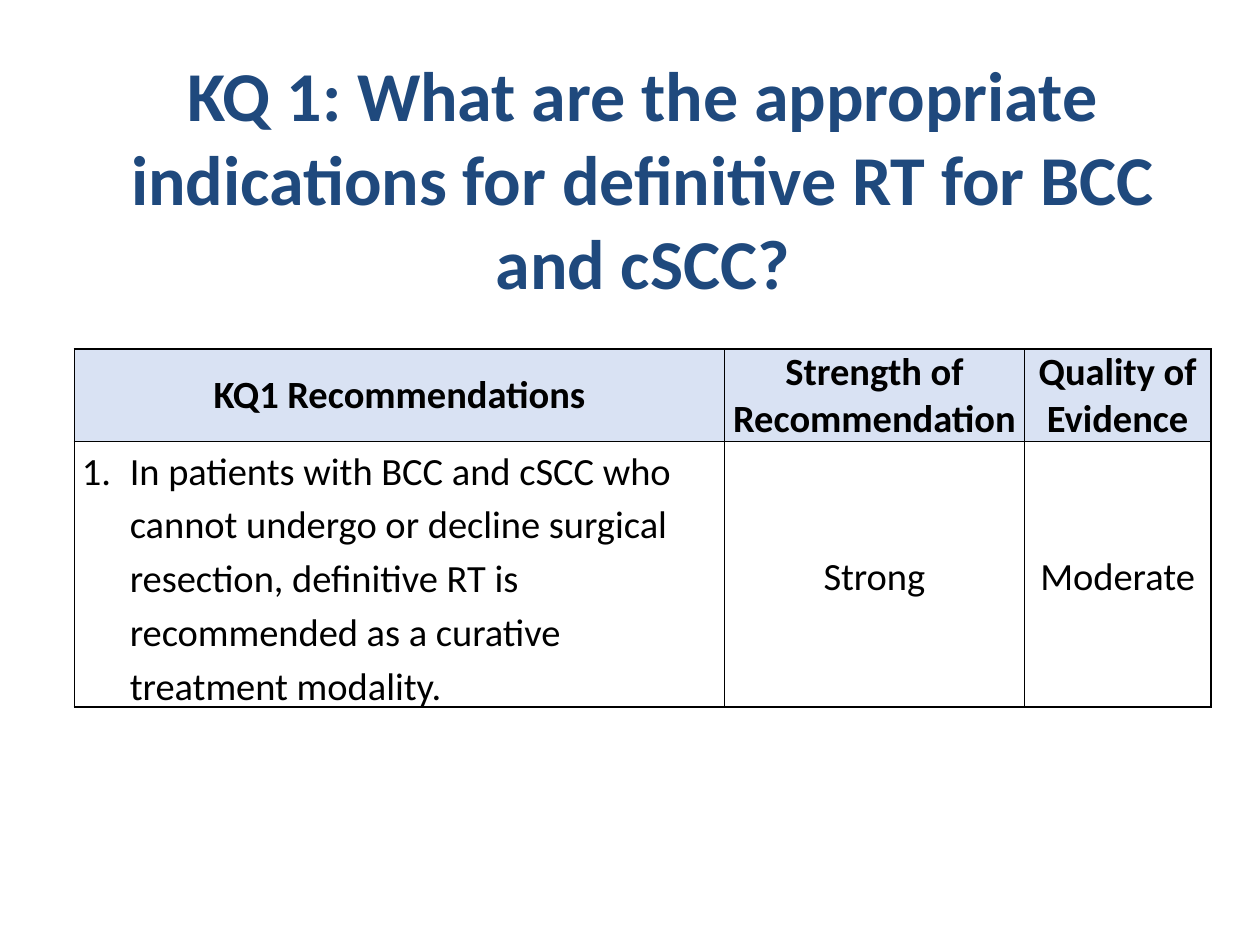
"""Build the KQ 1 recommendation slide with its evidence table."""
from dataclasses import dataclass

from lxml import etree
from pptx import Presentation
from pptx.dml.color import RGBColor
from pptx.enum.text import MSO_ANCHOR, PP_ALIGN
from pptx.oxml.ns import qn
from pptx.util import Inches, Pt

LEFT, CENTER = PP_ALIGN.LEFT, PP_ALIGN.CENTER
TOP, MIDDLE = MSO_ANCHOR.TOP, MSO_ANCHOR.MIDDLE


@dataclass(frozen=True)
class Theme:
    font: str = "Calibri"
    title: RGBColor = RGBColor(0x1F, 0x49, 0x7D)
    ink: RGBColor = RGBColor(0, 0, 0)
    header: RGBColor = RGBColor(0xD9, 0xE2, 0xF3)
    border: str = "000000"
    title_size: Pt = Pt(40)
    table_size: Pt = Pt(22)
    border_width: Pt = Pt(1)


@dataclass(frozen=True)
class CellText:
    text: str
    header: bool = False
    numbered: bool = False


THEME = Theme()
COLUMNS = (5.16, 2.38, 1.48)
ROWS = (0.6, 1.36)
TABLE = (
    (
        CellText("KQ1 Recommendations", header=True),
        CellText("Strength of Recommendation", header=True),
        CellText("Quality of Evidence", header=True),
    ),
    (
        CellText(
            "In patients with BCC and cSCC who cannot undergo or decline surgical "
            "resection, definitive RT is recommended as a curative treatment modality.",
            numbered=True,
        ),
        CellText("Strong"),
        CellText("Moderate"),
    ),
)


def add_run(p, text: str, size: Pt, color: RGBColor, bold: bool) -> None:
    r = p.add_run()
    r.text = text
    r.font.name = THEME.font
    r.font.size = size
    r.font.bold = bold
    r.font.color.rgb = color


def number_paragraph(p) -> None:
    pPr = p._p.get_or_add_pPr()
    pPr.set("marL", str(Inches(0.38)))
    pPr.set("indent", str(Inches(-0.38)))
    etree.SubElement(pPr, qn("a:buFont"), typeface="+mj-lt")
    etree.SubElement(pPr, qn("a:buAutoNum"), type="arabicPeriod")


def add_borders(cell) -> None:
    tcPr = cell._tc.get_or_add_tcPr()
    for i, side in enumerate(("lnL", "lnR", "lnT", "lnB")):
        ln = etree.Element(qn(f"a:{side}"), w=str(THEME.border_width))
        fill = etree.SubElement(ln, qn("a:solidFill"))
        etree.SubElement(fill, qn("a:srgbClr"), val=THEME.border)
        tcPr.insert(i, ln)


def fill_cell(cell, item: CellText) -> None:
    cell.margin_left = cell.margin_right = Inches(0.06)
    cell.margin_top = cell.margin_bottom = Inches(0)
    cell.vertical_anchor = TOP if item.numbered else MIDDLE
    if item.header:
        cell.fill.solid()
        cell.fill.fore_color.rgb = THEME.header
    else:
        cell.fill.background()
    add_borders(cell)
    p = cell.text_frame.paragraphs[0]
    p.alignment = LEFT if item.numbered else CENTER
    if not item.header:
        p.line_spacing = 1.15
    if item.numbered:
        number_paragraph(p)
    add_run(p, item.text, THEME.table_size, THEME.ink, item.header)


def add_title(s, text: str) -> None:
    sp = s.shapes.add_textbox(Inches(0.79), Inches(0.33), Inches(8.62), Inches(1.09))
    tf = sp.text_frame
    tf.word_wrap = True
    tf.vertical_anchor = TOP
    tf.margin_top = Inches(0.08)
    p = tf.paragraphs[0]
    p.alignment = CENTER
    add_run(p, text, THEME.title_size, THEME.title, True)


def add_recommendations(s) -> None:
    sp = s.shapes.add_table(
        len(ROWS), len(COLUMNS),
        Inches(0.59), Inches(2.77), Inches(sum(COLUMNS)), Inches(sum(ROWS)),
    )
    table = sp.table
    table.first_row = table.horz_banding = False
    for column, width in zip(table.columns, COLUMNS):
        column.width = Inches(width)
    for row, height, items in zip(table.rows, ROWS, TABLE):
        row.height = Inches(height)
        for cell, item in zip(row.cells, items):
            fill_cell(cell, item)


def main() -> None:
    prs = Presentation()
    prs.slide_width, prs.slide_height = Inches(10), Inches(7.5)
    s = prs.slides.add_slide(prs.slide_layouts[6])
    add_title(s, "KQ 1: What are the appropriate indications for definitive RT for BCC and cSCC?")
    add_recommendations(s)
    prs.save("out.pptx")


if __name__ == "__main__":
    main()
